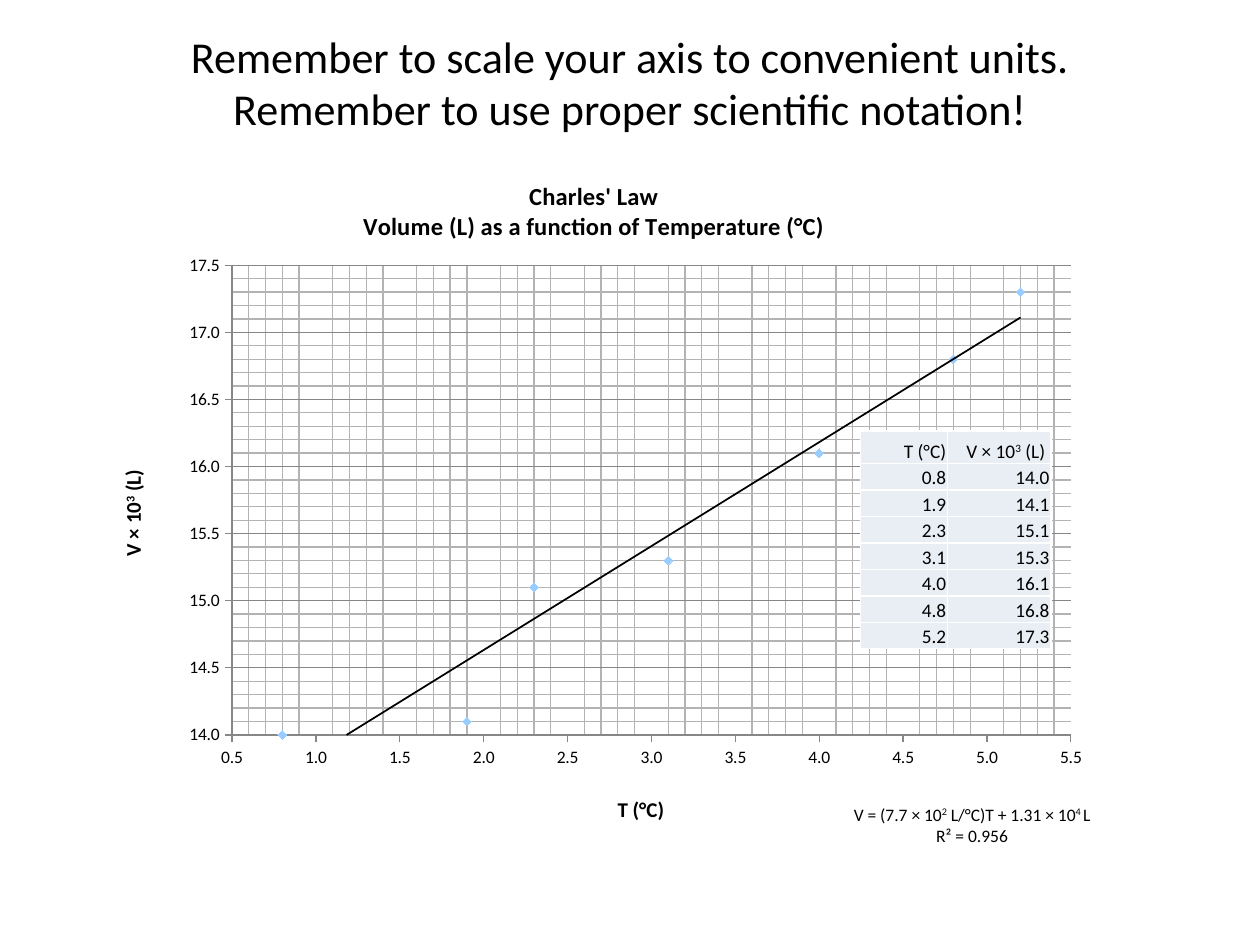
from dataclasses import dataclass
from typing import NamedTuple

from lxml import etree
from pptx import Presentation
from pptx.chart.data import XyChartData
from pptx.dml.color import RGBColor
from pptx.enum.chart import XL_CHART_TYPE, XL_MARKER_STYLE, XL_TICK_MARK
from pptx.enum.text import MSO_ANCHOR, PP_ALIGN
from pptx.oxml import parse_xml
from pptx.oxml.ns import nsdecls, qn
from pptx.util import Inches, Pt

SCATTER = XL_CHART_TYPE.XY_SCATTER
DIAMOND = XL_MARKER_STYLE.DIAMOND
TICK_OUT = XL_TICK_MARK.OUTSIDE
CENTER, RIGHT = PP_ALIGN.CENTER, PP_ALIGN.RIGHT
MIDDLE, BOTTOM = MSO_ANCHOR.MIDDLE, MSO_ANCHOR.BOTTOM


@dataclass(frozen=True)
class Theme:
    font: str = "Calibri"
    ink: RGBColor = RGBColor(0, 0, 0)
    point: RGBColor = RGBColor(0x99, 0xCC, 0xFF)
    major_line: RGBColor = RGBColor(0x87, 0x87, 0x87)
    minor_line: RGBColor = RGBColor(0xB3, 0xB3, 0xB3)
    cell: RGBColor = RGBColor(0xE9, 0xED, 0xF4)
    border: str = "FFFFFF"
    heading: float = 25.2
    chart_title: float = 14
    axis_title: float = 12
    table_text: float = 11
    small: float = 10


class Box(NamedTuple):
    left: float
    top: float
    width: float
    height: float

    def lengths(self) -> list:
        return [Inches(value) for value in self]


class AxisScale(NamedTuple):
    title: str
    low: float
    high: float
    title_x: float
    title_y: float


THEME = Theme()
# A caret pair encloses superscript text
VOLUME_LABEL = "V × 10^3^ (L)"
TEMPERATURE_LABEL = "T (°C)"
MEASUREMENTS = [(0.8, 14.0), (1.9, 14.1), (2.3, 15.1), (3.1, 15.3),
                (4.0, 16.1), (4.8, 16.8), (5.2, 17.3)]
TEMPERATURE = AxisScale(TEMPERATURE_LABEL, 0.5, 5.5, 0.52, 0.93)
VOLUME = AxisScale(VOLUME_LABEL, 14, 17.5, 0.03, 0.46)


def write(paragraph, text: str, size: float, bold: bool = False, align=None) -> None:
    """Fill a paragraph, raising the parts between carets."""
    if align is not None:
        paragraph.alignment = align
    font = paragraph.font
    font.name, font.size, font.bold = THEME.font, Pt(size), bold
    font.color.rgb = THEME.ink
    for part_index, part in enumerate(text.split("^")):
        for line_index, line in enumerate(part.split("\n")):
            if line_index:
                paragraph.add_line_break()
            run = paragraph.add_run()
            run.text = line
            if part_index % 2:
                run._r.get_or_add_rPr().set("baseline", "30000")


def add_text(slide, box: Box, text: str, size: float, anchor=None) -> None:
    frame = slide.shapes.add_textbox(*box.lengths()).text_frame
    frame.word_wrap = True
    if anchor is not None:
        frame.vertical_anchor = anchor
    write(frame.paragraphs[0], text, size, align=CENTER)


def layout_xml(x: float, y: float, size: tuple = ()):
    """Manual chart layout in fractions of the chart area."""
    target = '<c:layoutTarget val="inner"/>' if size else ""
    extent = '<c:w val="{}"/><c:h val="{}"/>'.format(*size) if size else ""
    return parse_xml(
        f'<c:layout {nsdecls("c")}><c:manualLayout>{target}'
        f'<c:xMode val="edge"/><c:yMode val="edge"/>'
        f'<c:x val="{x}"/><c:y val="{y}"/>{extent}</c:manualLayout></c:layout>')


def place(element, layout) -> None:
    """Swap any existing layout of a title or plot area for a manual one."""
    for old in element.findall(qn("c:layout")):
        element.remove(old)
    text = element.find(qn("c:tx"))
    element.insert(0 if text is None else element.index(text) + 1, layout)


def set_title(title, text: str, size: float, x: float, y: float) -> None:
    write(title.text_frame.paragraphs[0], text, size, bold=True)
    place(title._element, layout_xml(x, y))


def line_xml(color: RGBColor, points: float):
    """Shape properties for chart parts that have no line format of their own."""
    return parse_xml(
        f'<c:spPr {nsdecls("c", "a")}><a:ln w="{Pt(points)}"><a:solidFill>'
        f'<a:srgbClr val="{color}"/></a:solidFill></a:ln></c:spPr>')


def style_line(line, color: RGBColor) -> None:
    line.color.rgb = color
    line.width = Pt(0.75)


def style_axis(axis, scale: AxisScale) -> None:
    axis.minimum_scale, axis.maximum_scale = scale.low, scale.high
    axis.major_unit, axis.minor_unit = 0.5, 0.1
    axis.major_tick_mark = TICK_OUT
    axis.tick_labels.number_format = "0.0"
    axis.tick_labels.number_format_is_linked = False
    axis.has_major_gridlines = False
    axis.has_minor_gridlines = True
    axis._element.find(qn("c:minorGridlines")).append(line_xml(THEME.minor_line, 0.75))
    style_line(axis.format.line, THEME.major_line)
    set_title(axis.axis_title, scale.title, THEME.axis_title, scale.title_x, scale.title_y)


def add_trendline(series) -> None:
    trendline = parse_xml(
        f'<c:trendline {nsdecls("c")}><c:trendlineType val="linear"/>'
        '<c:dispRSqr val="0"/><c:dispEq val="0"/></c:trendline>')
    trendline.insert(0, line_xml(THEME.ink, 1))
    series._element.find(qn("c:xVal")).addprevious(trendline)


def add_scatter(slide, box: Box) -> None:
    data = XyChartData(number_format="0.0")
    points = data.add_series("Series 1")
    for temperature, volume in MEASUREMENTS:
        points.add_data_point(temperature, volume)
    chart = slide.shapes.add_chart(SCATTER, *box.lengths(), data).chart
    chart.has_legend = False
    chart.font.name, chart.font.size = THEME.font, Pt(THEME.small)
    chart.font.color.rgb = THEME.ink
    set_title(chart.chart_title,
              "Charles' Law\nVolume (L) as a function of Temperature (°C)",
              THEME.chart_title, 0.27, 0.04)
    place(chart._chartSpace.chart.plotArea, layout_xml(0.145, 0.17, (0.824, 0.678)))
    style_axis(chart.category_axis, TEMPERATURE)
    style_axis(chart.value_axis, VOLUME)
    chart.value_axis.has_major_gridlines = True
    style_line(chart.value_axis.major_gridlines.format.line, THEME.major_line)

    plot = chart.plots[0]
    plot.vary_by_categories = False
    series = plot.series[0]
    series.smooth = False
    series.format.line.fill.background()
    series.marker.style, series.marker.size = DIAMOND, 5
    series.marker.format.fill.solid()
    series.marker.format.fill.fore_color.rgb = THEME.point
    series.marker.format.line.color.rgb = THEME.point
    add_trendline(series)


def style_cell(cell, text: str) -> None:
    cell.margin_left = cell.margin_right = cell.margin_top = Inches(0.01)
    cell.margin_bottom = 0
    cell.vertical_anchor = BOTTOM
    write(cell.text_frame.paragraphs[0], text, THEME.table_text, align=RIGHT)
    properties = cell._tc.get_or_add_tcPr()
    for side in ("a:lnL", "a:lnR", "a:lnT", "a:lnB"):
        border = etree.SubElement(properties, qn(side), w=str(Pt(1)))
        fill = etree.SubElement(border, qn("a:solidFill"))
        etree.SubElement(fill, qn("a:srgbClr"), val=THEME.border)
    cell.fill.solid()
    cell.fill.fore_color.rgb = THEME.cell


def add_data_table(slide, box: Box) -> None:
    rows = [(TEMPERATURE_LABEL, VOLUME_LABEL + " ")]
    rows += [(f"{temperature:.1f}", f"{volume:.1f}") for temperature, volume in MEASUREMENTS]
    table = slide.shapes.add_table(len(rows), 2, *box.lengths()).table
    table.first_row = table.horz_banding = False
    for column, width in zip(table.columns, (0.69, 0.82)):
        column.width = Inches(width)
    for row_index, values in enumerate(rows):
        table.rows[row_index].height = Inches(0.21 if row_index else 0.26)
        for column_index, value in enumerate(values):
            style_cell(table.cell(row_index, column_index), value)


def main() -> None:
    deck = Presentation()
    deck.slide_width, deck.slide_height = Inches(10), Inches(7.5)
    slide = deck.slides.add_slide(deck.slide_layouts[6])
    # Heading
    add_text(slide, Box(0.5, 0.3, 9, 0.7),
             "Remember to scale your axis to convenient units.\n"
             "Remember to use proper scientific notation!", THEME.heading, MIDDLE)
    # Plot, its data and the fitted equation
    add_scatter(slide, Box(0.67, 1.17, 8.08, 5.5))
    add_data_table(slide, Box(6.83, 3.42, 1.51, 1.72))
    add_text(slide, Box(6.58, 6.33, 2.27, 0.44),
             "V = (7.7 × 10^2^ L/°C)T + 1.31 × 10^4 ^L\nR² = 0.956", THEME.small)
    deck.save("out.pptx")


if __name__ == "__main__":
    main()
